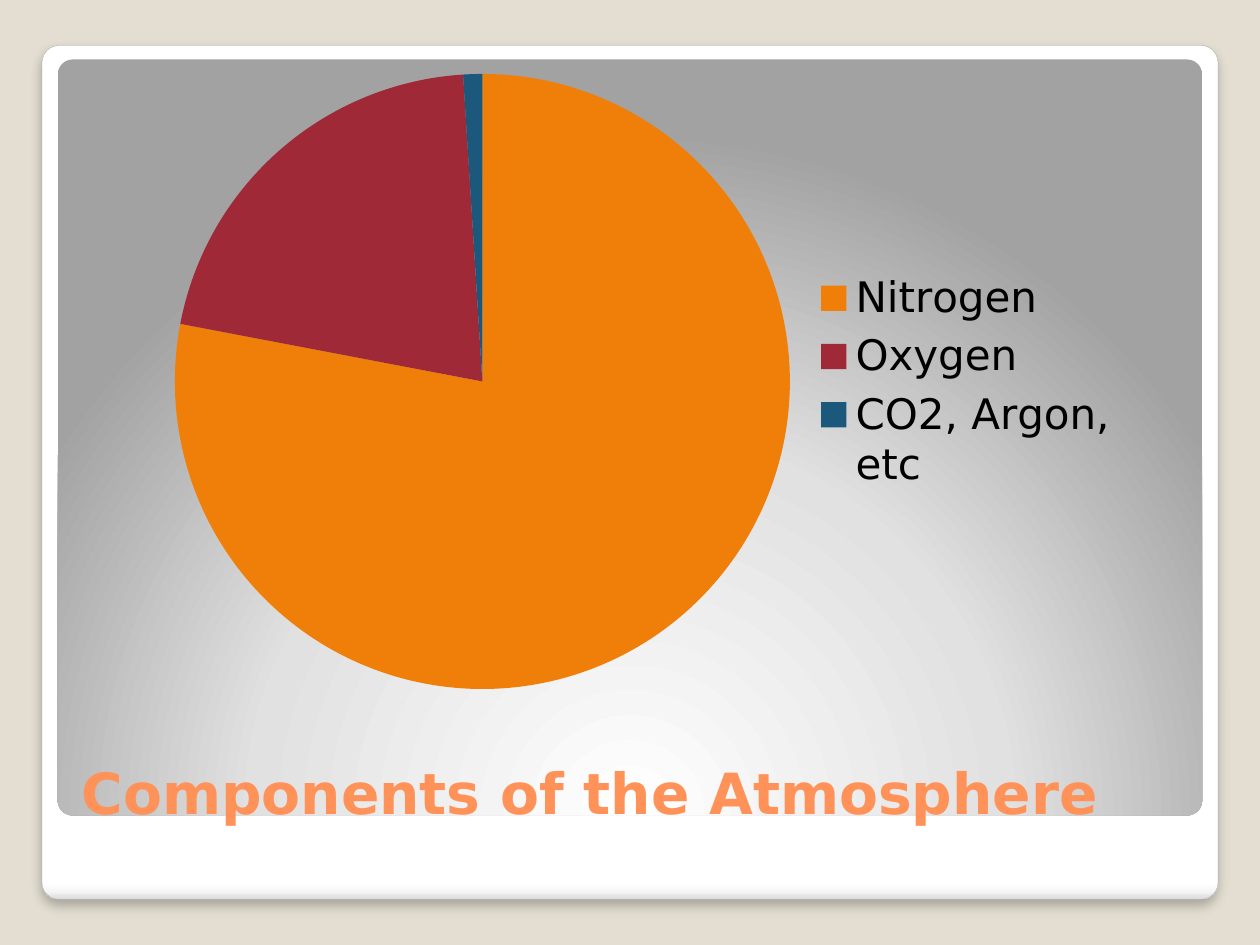
from dataclasses import dataclass

from lxml.etree import SubElement
from pptx import Presentation
from pptx.chart.data import CategoryChartData
from pptx.dml.color import RGBColor
from pptx.enum.chart import XL_CHART_TYPE, XL_LEGEND_POSITION
from pptx.enum.shapes import MSO_SHAPE
from pptx.enum.text import MSO_ANCHOR, PP_ALIGN
from pptx.oxml import parse_xml
from pptx.oxml.ns import nsdecls, qn
from pptx.util import Pt

FONT = "DejaVu Sans"
COLORS = {
    "background": "E3DED1",
    "border": "A4A4A4",
    "title": "FF9258",
    "text": "000000",
    "Nitrogen": "F07F09",
    "Oxygen": "9F2936",
    "CO2, Argon, etc": "1B587C",
}
SHARES = {"Nitrogen": 78, "Oxygen": 21, "CO2, Argon, etc": 1}
LINEAR = '<a:lin ang="5400000" scaled="0"/>'
RADIAL = ('<a:path path="circle"><a:fillToRect l="50000" t="175000" '
          'r="50000" b="-75000"/></a:path>')


@dataclass
class Panel:
    box: tuple[float, float, float, float]
    stops: dict[int, str]
    direction: str
    border: str | None = None
    shadow: bool = False


PANELS = [
    Panel((24, 26, 672, 488),
          {0: "FFFFFF", 98: "FFFFFF", 99: "F7F7F7", 100: "DADADA"},
          LINEAR, COLORS["border"], True),
    Panel((33, 34, 654, 432),
          {0: "FFFFFF", 55: "E1E1E1", 100: "A2A2A2"}, RADIAL),
]


def rgb(color: str) -> RGBColor:
    return RGBColor.from_string(color)


def set_gradient(sp, stops: dict[int, str], direction: str) -> None:
    """Swap the shape's fill for a gradient; stops map percent to colour."""
    gs = "".join(f'<a:gs pos="{pos * 1000}"><a:srgbClr val="{color}"/></a:gs>'
                 for pos, color in stops.items())
    sp.fill.background()
    pr = sp.element.spPr
    pr.replace(pr.find(qn("a:noFill")), parse_xml(
        f'<a:gradFill {nsdecls("a")} rotWithShape="1">'
        f"<a:gsLst>{gs}</a:gsLst>{direction}</a:gradFill>"))


def add_shadow(sp) -> None:
    effects = sp.element.spPr.find(qn("a:effectLst"))
    shadow = SubElement(effects, qn("a:outerShdw"), blurRad=str(Pt(6)),
                        dist=str(Pt(4)), dir="5400000", rotWithShape="0")
    color = SubElement(shadow, qn("a:srgbClr"), val="000000")
    SubElement(color, qn("a:alpha"), val="25000")


def add_panel(slide, panel: Panel) -> None:
    sp = slide.shapes.add_shape(MSO_SHAPE.ROUNDED_RECTANGLE,
                                *map(Pt, panel.box))
    sp.adjustments[0] = 0.02
    sp.shadow.inherit = False
    set_gradient(sp, panel.stops, panel.direction)
    if panel.border:
        sp.line.color.rgb = rgb(panel.border)
        sp.line.width = Pt(0.16)
    else:
        sp.line.fill.background()
    if panel.shadow:
        add_shadow(sp)


def format_font(font, *, size: float, color: str, bold: bool = False) -> None:
    font.name, font.size, font.bold = FONT, Pt(size), bold
    font.color.rgb = rgb(color)


def add_text(slide, text: str, *, box: tuple, size: float, color: str,
             bold: bool = False) -> None:
    tf = slide.shapes.add_textbox(*map(Pt, box)).text_frame
    tf.word_wrap = True
    tf.vertical_anchor = MSO_ANCHOR.BOTTOM
    p = tf.paragraphs[0]
    p.alignment = PP_ALIGN.LEFT
    r = p.add_run()
    r.text = text
    format_font(r.font, size=size, color=color, bold=bold)


def add_pie(slide, shares: dict[str, int], box: tuple) -> None:
    data = CategoryChartData()
    data.categories = list(shares)
    data.add_series("Series 1", list(shares.values()))
    chart = slide.shapes.add_chart(XL_CHART_TYPE.PIE, *map(Pt, box),
                                   data).chart
    chart.has_title = False
    format_font(chart.font, size=18, color=COLORS["text"])
    chart.has_legend = True
    chart.legend.position = XL_LEGEND_POSITION.RIGHT
    chart.legend.include_in_layout = False
    format_font(chart.legend.font, size=24, color=COLORS["text"])
    plot = chart.plots[0]
    plot.vary_by_categories = True
    for i, name in enumerate(shares):
        fill = plot.series[0].points[i].format.fill
        fill.solid()
        fill.fore_color.rgb = rgb(COLORS[name])


def main() -> None:
    prs = Presentation()
    prs.slide_width, prs.slide_height = Pt(720), Pt(540)
    slide = prs.slides.add_slide(prs.slide_layouts[6])
    slide.background.fill.solid()
    slide.background.fill.fore_color.rgb = rgb(COLORS["background"])
    for panel in PANELS:
        add_panel(slide, panel)
    add_text(slide, "Components of the Atmosphere",
             box=(39.6, 392.4, 644.4, 82.8), size=32.4,
             color=COLORS["title"], bold=True)
    add_pie(slide, SHARES, (90, 24, 558, 388))
    prs.save("out.pptx")


if __name__ == "__main__":
    main()
